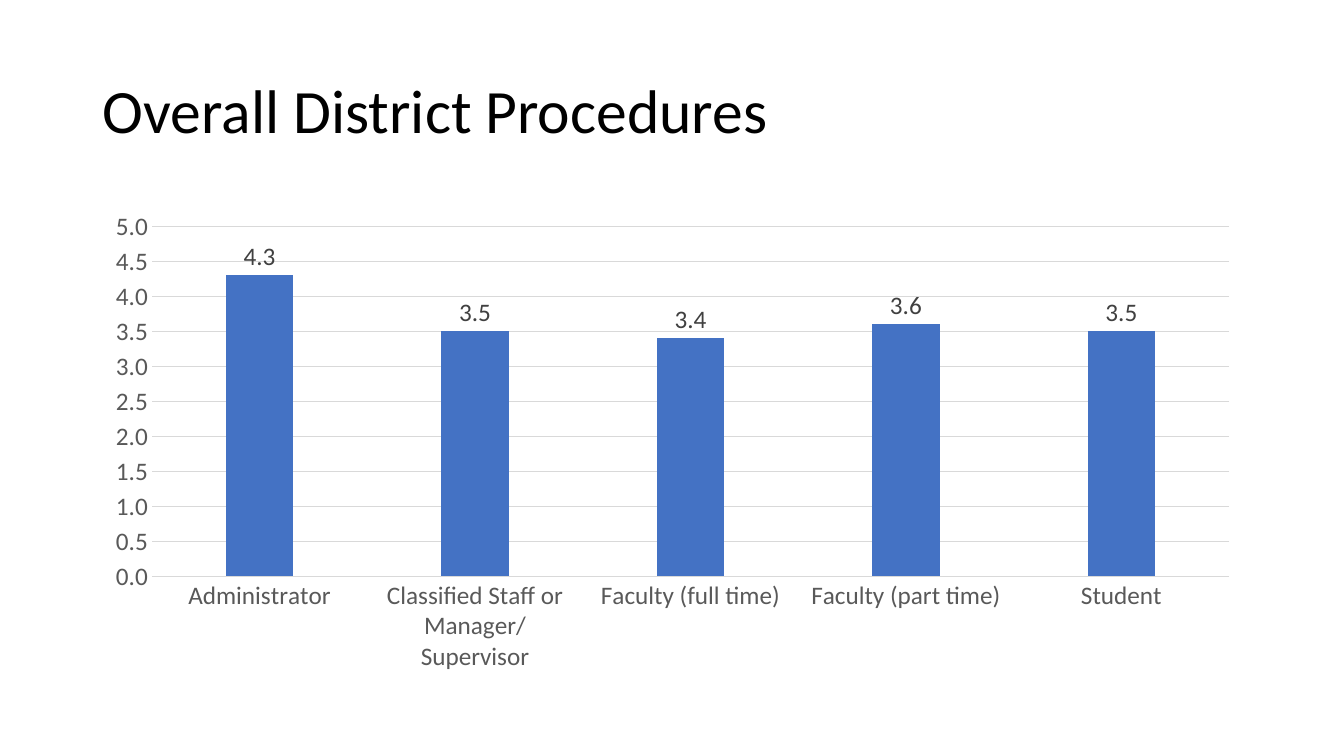
from pptx import Presentation
from pptx import util as u
from pptx.chart.data import CategoryChartData
from pptx.dml.color import RGBColor
from pptx.enum import chart as ch, text

RATINGS = {
    "Administrator": 4.3,
    "Classified Staff or Manager/Supervisor": 3.5,
    "Faculty (full time)": 3.4,
    "Faculty (part time)": 3.6,
    "Student": 3.5,
}


def color(hex_string):
    return RGBColor.from_string(hex_string)


def format_text(font, size=18, fill="595959"):
    font.name = "Calibri"
    font.size = u.Pt(size)
    font.bold = False
    font.color.rgb = color(fill)


# Slide and shared margins
presentation = Presentation()
presentation.slide_width = u.Inches(13.33)
presentation.slide_height = u.Inches(7.5)
slide = presentation.slides.add_slide(presentation.slide_layouts[5])
left, width = u.Inches(0.92), u.Inches(11.5)

# Title
title = slide.shapes.title
title.left, title.top = left, u.Inches(0.4)
title.width, title.height = width, u.Inches(1.45)
title.text_frame.text = "Overall District Procedures"
title.text_frame.vertical_anchor = text.MSO_ANCHOR.MIDDLE
paragraph = title.text_frame.paragraphs[0]
paragraph.alignment = text.PP_ALIGN.LEFT
paragraph.line_spacing = 0.9
format_text(paragraph.runs[0].font, size=44, fill="000000")

# Column chart
chart_data = CategoryChartData(number_format="0.0")
chart_data.categories = list(RATINGS)
chart_data.add_series("Series 1", list(RATINGS.values()))
chart = slide.shapes.add_chart(
    ch.XL_CHART_TYPE.COLUMN_CLUSTERED, left, u.Inches(2), width, u.Inches(4.76), chart_data
).chart
chart.has_title = False
chart.has_legend = False
format_text(chart.font, fill="000000")

# Columns and their labels
plot = chart.plots[0]
plot.gap_width = 219
plot.overlap = -27
plot.vary_by_categories = False
series = plot.series[0]
series.format.fill.solid()
series.format.fill.fore_color.rgb = color("4472C4")
labels = series.data_labels
labels.show_value = True
labels.position = ch.XL_LABEL_POSITION.OUTSIDE_END
labels.number_format = "0.0"
labels.number_format_is_linked = False
format_text(labels.font, fill="404040")

# Axes and gridlines
category_axis, value_axis = chart.category_axis, chart.value_axis
for axis in (category_axis, value_axis):
    axis.major_tick_mark = axis.minor_tick_mark = ch.XL_TICK_MARK.NONE
    format_text(axis.tick_labels.font)
value_axis.minimum_scale, value_axis.maximum_scale = 0, 5
value_axis.major_unit = 0.5
value_axis.tick_labels.number_format = "0.0"
value_axis.tick_labels.number_format_is_linked = False
value_axis.format.line.fill.background()
for line in (category_axis.format.line, value_axis.major_gridlines.format.line):
    line.color.rgb = color("D9D9D9")
    line.width = u.Pt(0.75)

presentation.save("out.pptx")
